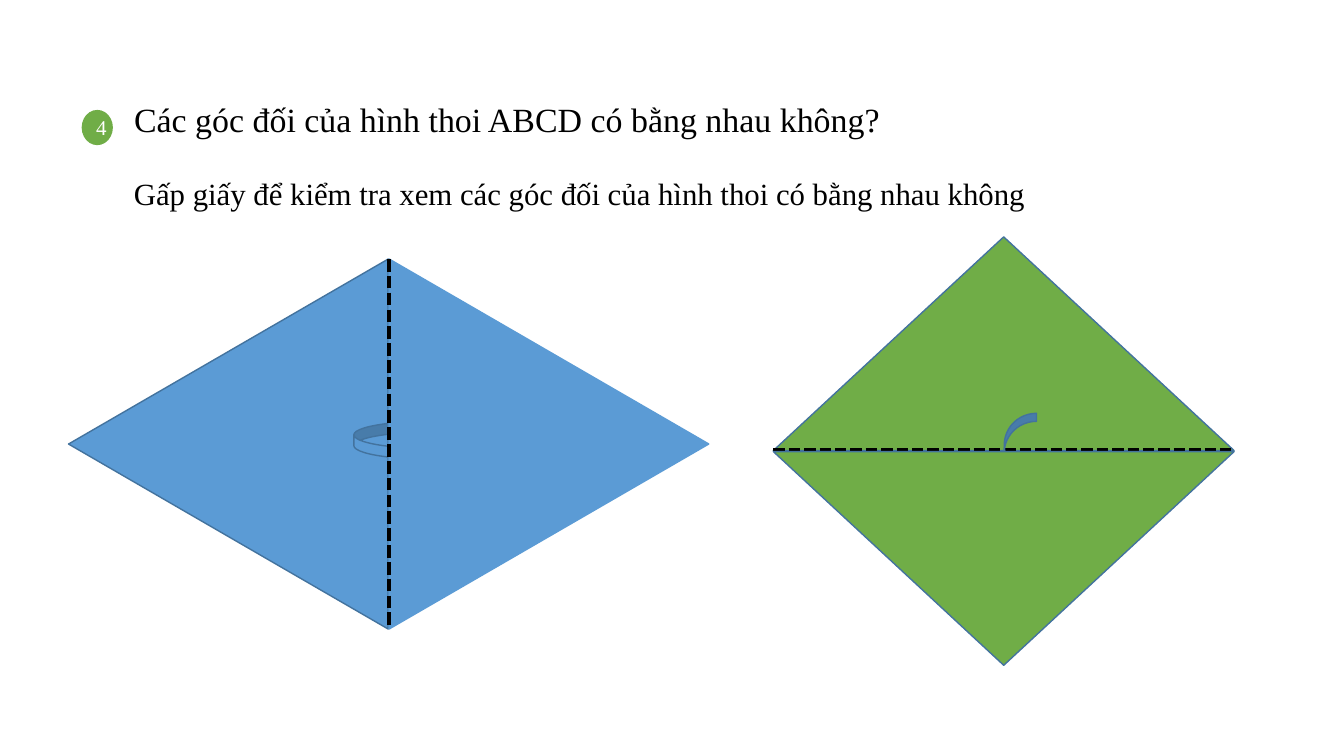
from lxml.etree import SubElement
from pptx import Presentation
from pptx.dml.color import RGBColor
from pptx.enum.dml import MSO_LINE
from pptx.enum.shapes import MSO_CONNECTOR, MSO_SHAPE
from pptx.enum.text import MSO_ANCHOR, MSO_AUTO_SIZE, PP_ALIGN
from pptx.oxml.ns import qn
from pptx.util import Emu, Pt

EMU_PER_PX = 9144  # 100 px to the inch


def px(length):
    return Emu(length * EMU_PER_PX)


def color(hex_string):
    return RGBColor.from_string(hex_string)


class RhombusSlide:
    font = "Times New Roman"
    black, white = "000000", "FFFFFF"
    blue, green, outline = "5B9BD5", "70AD47", "43739E"

    def __init__(self, presentation):
        self.slide = presentation.slides.add_slide(presentation.slide_layouts[5])

    def add_words(self, shape, text, size, hex_color, alignment, anchor):
        frame = shape.text_frame
        frame.word_wrap = True
        frame.vertical_anchor = anchor
        paragraph = frame.paragraphs[0]
        paragraph.alignment = alignment
        run = paragraph.add_run()
        run.text = text
        run.font.name = self.font
        run.font.size = Pt(size)
        run.font.color.rgb = color(hex_color)

    def title(self, left, top, width, height, text, size):
        shape = self.slide.shapes.title
        shape.left, shape.top = px(left), px(top)
        shape.width, shape.height = px(width), px(height)
        shape.text_frame.auto_size = MSO_AUTO_SIZE.NONE
        self.add_words(shape, text, size, self.black, PP_ALIGN.LEFT, MSO_ANCHOR.TOP)

    def text(self, left, top, width, height, text, size):
        box = self.slide.shapes.add_textbox(px(left), px(top), px(width), px(height))
        self.add_words(box, text, size, self.black, PP_ALIGN.LEFT, MSO_ANCHOR.TOP)

    def shape(self, kind, left, top, width, height, fill, line=None, rotation=0):
        shape = self.slide.shapes.add_shape(
            kind, px(left), px(top), px(width), px(height))
        shape.shadow.inherit = False
        shape.rotation = rotation
        shape.fill.solid()
        shape.fill.fore_color.rgb = color(fill)
        if line:
            shape.line.color.rgb = color(line)
            shape.line.width = Pt(1)
        else:
            shape.line.fill.background()
        return shape

    def triangle(self, left, top, base, height, fill, line, rotation=0):
        self.shape(MSO_SHAPE.ISOSCELES_TRIANGLE, left, top, base, height,
                   fill, line, rotation)

    def fold_arrow(self, left, top, width, height):
        self.shape(MSO_SHAPE.CURVED_RIGHT_ARROW, left, top, width, height,
                   self.blue, self.outline)

    def fold_line(self, start_x, start_y, end_x, end_y, width):
        connector = self.slide.shapes.add_connector(
            MSO_CONNECTOR.STRAIGHT, px(start_x), px(start_y), px(end_x), px(end_y))
        connector.line.color.rgb = color(self.black)
        connector.line.width = Pt(width)
        connector.line.dash_style = MSO_LINE.SQUARE_DOT
        SubElement(connector._element.spPr, qn("a:effectLst"))

    def badge(self, left, top, width, height, text, size):
        shape = self.shape(MSO_SHAPE.OVAL, left, top, width, height, self.green)
        self.add_words(shape, text, size, self.white, PP_ALIGN.CENTER, MSO_ANCHOR.MIDDLE)


def main():
    presentation = Presentation()
    presentation.slide_width, presentation.slide_height = px(1333), px(750)
    page = RhombusSlide(presentation)

    # Blue rhombus, folded along its vertical diagonal
    page.triangle(43, 282, 367, 317, page.blue, page.outline, 270)
    page.fold_arrow(351, 418, 74, 43)
    page.triangle(361, 282, 367, 317, page.blue, page.blue, 90)
    page.fold_line(386, 257, 386, 624, 3)

    # Green rhombus, folded along its horizontal diagonal
    page.triangle(767, 235, 457, 212, page.green, page.outline)
    page.fold_line(767, 446, 1224, 446, 2.75)
    page.fold_arrow(996, 410, 32, 75)
    page.triangle(767, 448, 457, 212, page.green, page.outline, 180)

    # Question and instruction
    page.text(123, 168, 1000, 47,
              "Gấp giấy để kiểm tra xem các góc đối của hình thoi có bằng nhau không", 22)
    page.badge(81, 109, 31, 35, "4", 15)
    page.title(123, 93, 899, 51,
               "Các góc đối của hình thoi ABCD có bằng nhau không?", 24.2)

    presentation.save("out.pptx")


if __name__ == "__main__":
    main()
